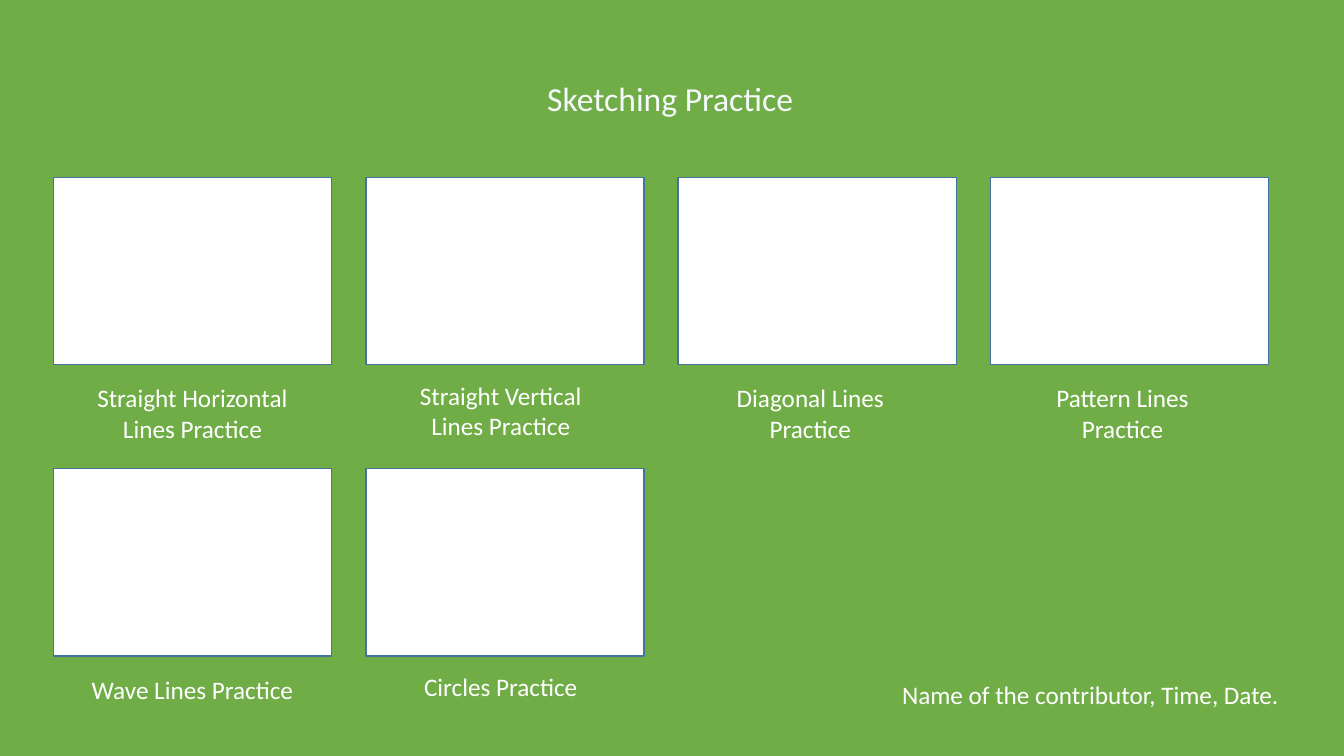
from pptx import Presentation
from pptx.dml.color import RGBColor
from pptx.enum.shapes import MSO_SHAPE
from pptx.enum.text import MSO_AUTO_SIZE, PP_ALIGN
from pptx.util import Cm, Pt

GREEN = RGBColor(0x70, 0xAD, 0x47)
WHITE = RGBColor(0xFF, 0xFF, 0xFF)
PALE = RGBColor(0xF5, 0xF9, 0xFC)
BLUE = RGBColor(0x43, 0x73, 0x9E)

COLUMNS = 4
PANEL_LEFT, PANEL_TOP = 1.35, 4.47
PANEL_WIDTH, PANEL_HEIGHT = 7.01, 4.72
COLUMN_STEP, ROW_STEP = 7.87, 7.34
CAPTION_WIDTH = 5.94
CAPTION_OFFSETS = [(0.53, 5.05), (0.43, 4.98), (0.36, 5.05), (0.36, 5.05)]
EXERCISES = [
    ("Straight Horizontal Lines Practice", 1.8),
    ("Straight Vertical Lines Practice", 1.8),
    ("Diagonal Lines Practice", 1.8),
    ("Pattern Lines Practice", 1.8),
    ("Wave Lines Practice", 1.02),
    ("Circles Practice", 1.02),
]


def apply_format(target, values):
    """Set each named attribute of the target."""
    for name, value in values.items():
        setattr(target, name, value)


def add_label(slide, text, left, top, width, height, size=18, color=WHITE, wrap=True):
    """Add a centred line of text that fits its box."""
    box = slide.shapes.add_textbox(Cm(left), Cm(top), Cm(width), Cm(height))
    frame = box.text_frame
    apply_format(frame, {"word_wrap": wrap, "auto_size": MSO_AUTO_SIZE.SHAPE_TO_FIT_TEXT})
    paragraph = frame.paragraphs[0]
    paragraph.alignment = PP_ALIGN.CENTER
    run = paragraph.add_run()
    run.text = text
    apply_format(run.font, {"name": "Calibri", "size": Pt(size)})
    run.font.color.rgb = color


def add_panel(slide, left, top):
    """Add an empty white sketching panel."""
    panel = slide.shapes.add_shape(
        MSO_SHAPE.RECTANGLE, Cm(left), Cm(top), Cm(PANEL_WIDTH), Cm(PANEL_HEIGHT)
    )
    panel.shadow.inherit = False
    panel.fill.solid()
    panel.fill.fore_color.rgb = WHITE
    panel.line.color.rgb = BLUE
    panel.line.width = Pt(1)


def add_exercise(slide, index, caption, caption_height):
    """Add a panel and its caption at a place in the grid."""
    row, column = divmod(index, COLUMNS)
    left = PANEL_LEFT + column * COLUMN_STEP
    top = PANEL_TOP + row * ROW_STEP
    across, down = CAPTION_OFFSETS[column]
    add_panel(slide, left, top)
    add_label(slide, caption, left + across, top + down, CAPTION_WIDTH, caption_height)


def main():
    """Build the sketching practice slide."""
    presentation = Presentation()
    apply_format(presentation, {"slide_width": Cm(33.87), "slide_height": Cm(19.05)})
    slide = presentation.slides.add_slide(presentation.slide_layouts[6])
    slide.background.fill.solid()
    slide.background.fill.fore_color.rgb = GREEN
    add_label(slide, "Sketching Practice", 13.36, 1.85, 7.06, 1.27, 24, PALE, False)
    for index, (caption, height) in enumerate(EXERCISES):
        add_exercise(slide, index, caption, height)
    add_label(slide, "Name of the contributor, Time, Date.", 22.4, 16.99, 10.16, 1.02)
    presentation.save("out.pptx")


if __name__ == "__main__":
    main()
